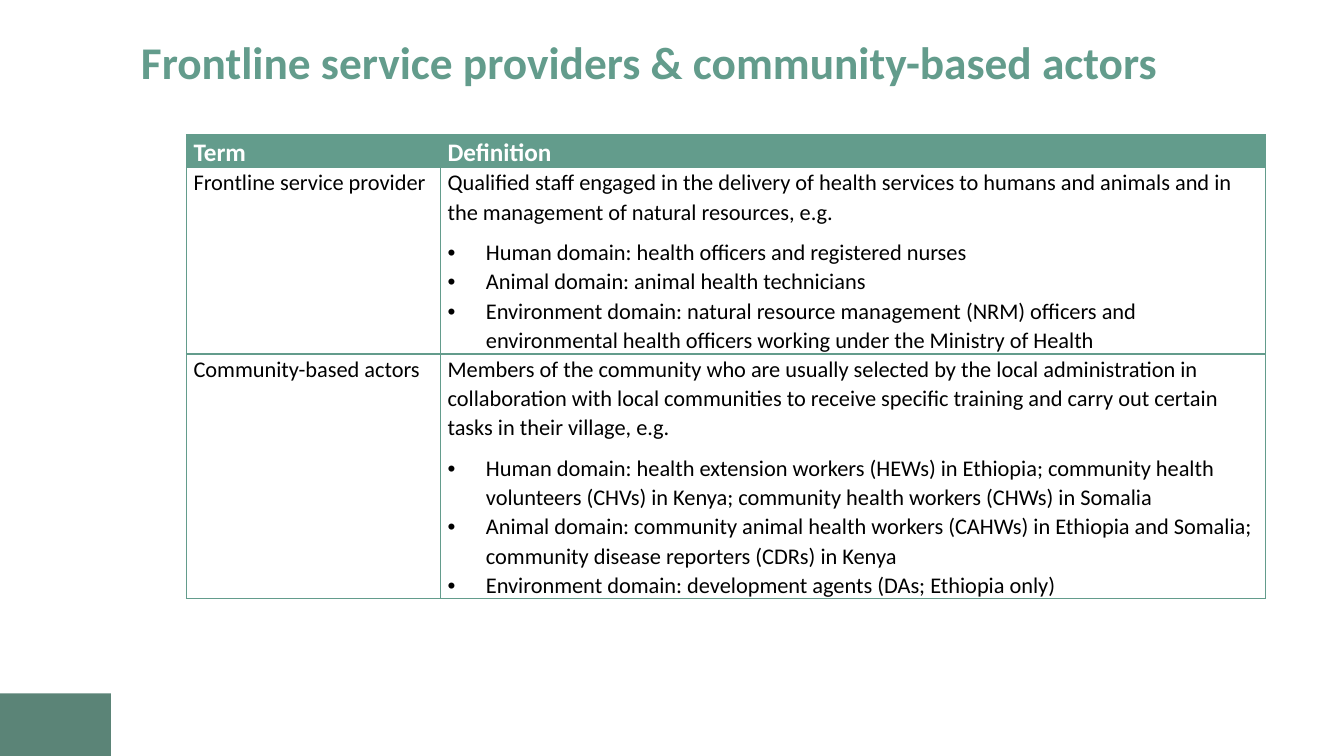
from lxml.etree import SubElement
from pptx import Presentation
from pptx.dml.color import RGBColor
from pptx.enum.shapes import MSO_SHAPE as Shape
from pptx.enum.text import MSO_ANCHOR as Anchor
from pptx.oxml import parse_xml
from pptx.oxml.ns import nsdecls, qn
from pptx.util import Inches, Pt

TITLE = "Frontline service providers & community-based actors"
HEADINGS = ("Term", "Definition")
TERMS = [
    (
        "Frontline service provider",
        "Qualified staff engaged in the delivery of health services to humans and animals and in "
        "the management of natural resources, e.g.",
        [
            "Human domain: health officers and registered nurses",
            "Animal domain: animal health technicians",
            "Environment domain: natural resource management (NRM) officers and "
            "environmental health officers working under the Ministry of Health",
        ],
    ),
    (
        "Community-based actors",
        "Members of the community who are usually selected by the local administration in "
        "collaboration with local communities to receive specific training and carry out certain "
        "tasks in their village, e.g.",
        [
            "Human domain: health extension workers (HEWs) in Ethiopia; community health "
            "volunteers (CHVs) in Kenya; community health workers (CHWs) in Somalia",
            "Animal domain: community animal health workers (CAHWs) in Ethiopia and Somalia; "
            "community disease reporters (CDRs) in Kenya",
            "Environment domain: development agents (DAs; Ethiopia only)",
        ],
    ),
]

GREEN = RGBColor(0x63, 0x9C, 0x8C)
DARK_GREEN = RGBColor(0x5B, 0x84, 0x77)
WHITE = RGBColor(0xFF, 0xFF, 0xFF)
BLACK = RGBColor(0, 0, 0)
FONT = "Calibri"

WIDTH, HEIGHT = 13.33, 7.5
COLUMNS = (2.52, 8.18)
ROWS = (0.32, 1.85, 2.43)
CORNER_TOP = 6.88


def set_font(paragraph, size, color, bold):
    font = paragraph.font if not paragraph.runs else paragraph.runs[0].font
    font.name, font.size, font.bold = FONT, Pt(size), bold
    font.color.rgb = color


def add_borders(cell):
    properties = cell._tc.get_or_add_tcPr()
    for side in "LRTB":
        properties.append(parse_xml(
            f'<a:ln{side} {nsdecls("a")} w="{Pt(1)}"><a:solidFill>'
            f'<a:srgbClr val="{GREEN}"/></a:solidFill></a:ln{side}>'))


def add_bullet(paragraph):
    properties = paragraph._p.get_or_add_pPr()
    indent = Inches(0.38)
    properties.set("marL", str(indent))
    properties.set("indent", str(-indent))
    SubElement(properties, qn("a:buFont")).set("typeface", "Arial")
    SubElement(properties, qn("a:buChar")).set("char", "•")


def fill_cell(cell, lead, bullets=(), heading=False):
    cell.margin_left = cell.margin_right = Inches(0.07)
    cell.margin_top = cell.margin_bottom = 0
    cell.vertical_anchor = Anchor.TOP
    add_borders(cell)
    if heading:
        cell.fill.solid()
        cell.fill.fore_color.rgb = GREEN
    else:
        cell.fill.background()
    lines = [lead, *bullets]
    cell.text_frame.text = "\n".join(lines)
    for index, paragraph in enumerate(cell.text_frame.paragraphs):
        if index:
            add_bullet(paragraph)
        paragraph.line_spacing = 1.07
        paragraph.space_before = Pt(0)
        paragraph.space_after = Pt(8 if index in (0, len(lines) - 1) else 0)
        set_font(paragraph, 18 if heading else 16, WHITE if heading else BLACK, heading)


def main():
    deck = Presentation()
    deck.slide_width, deck.slide_height = Inches(WIDTH), Inches(HEIGHT)
    slide = deck.slides.add_slide(deck.slide_layouts[6])

    corner = slide.shapes.add_shape(
        Shape.RECTANGLE, 0, Inches(CORNER_TOP), Inches(1.1), Inches(HEIGHT - CORNER_TOP))
    corner.shadow.inherit = False
    corner.fill.solid()
    corner.fill.fore_color.rgb = DARK_GREEN
    corner.line.fill.background()

    title = slide.shapes.add_textbox(
        Inches(1.3), Inches(0.29), Inches(11.11), Inches(0.71)).text_frame
    title.word_wrap = True
    title.vertical_anchor = Anchor.MIDDLE
    title.text = TITLE
    title.paragraphs[0].line_spacing = 0.9
    set_font(title.paragraphs[0], 32.4, GREEN, True)

    table = slide.shapes.add_table(
        len(ROWS), len(COLUMNS), Inches(1.85), Inches(1.34),
        Inches(sum(COLUMNS)), Inches(sum(ROWS))).table
    table.first_row = table.horz_banding = False
    for column, width in zip(table.columns, COLUMNS):
        column.width = Inches(width)
    for row, height in zip(table.rows, ROWS):
        row.height = Inches(height)
    for column, heading in enumerate(HEADINGS):
        fill_cell(table.cell(0, column), heading, heading=True)
    for row, (term, definition, examples) in enumerate(TERMS, 1):
        fill_cell(table.cell(row, 0), term)
        fill_cell(table.cell(row, 1), definition, examples)

    deck.save("out.pptx")


if __name__ == "__main__":
    main()
